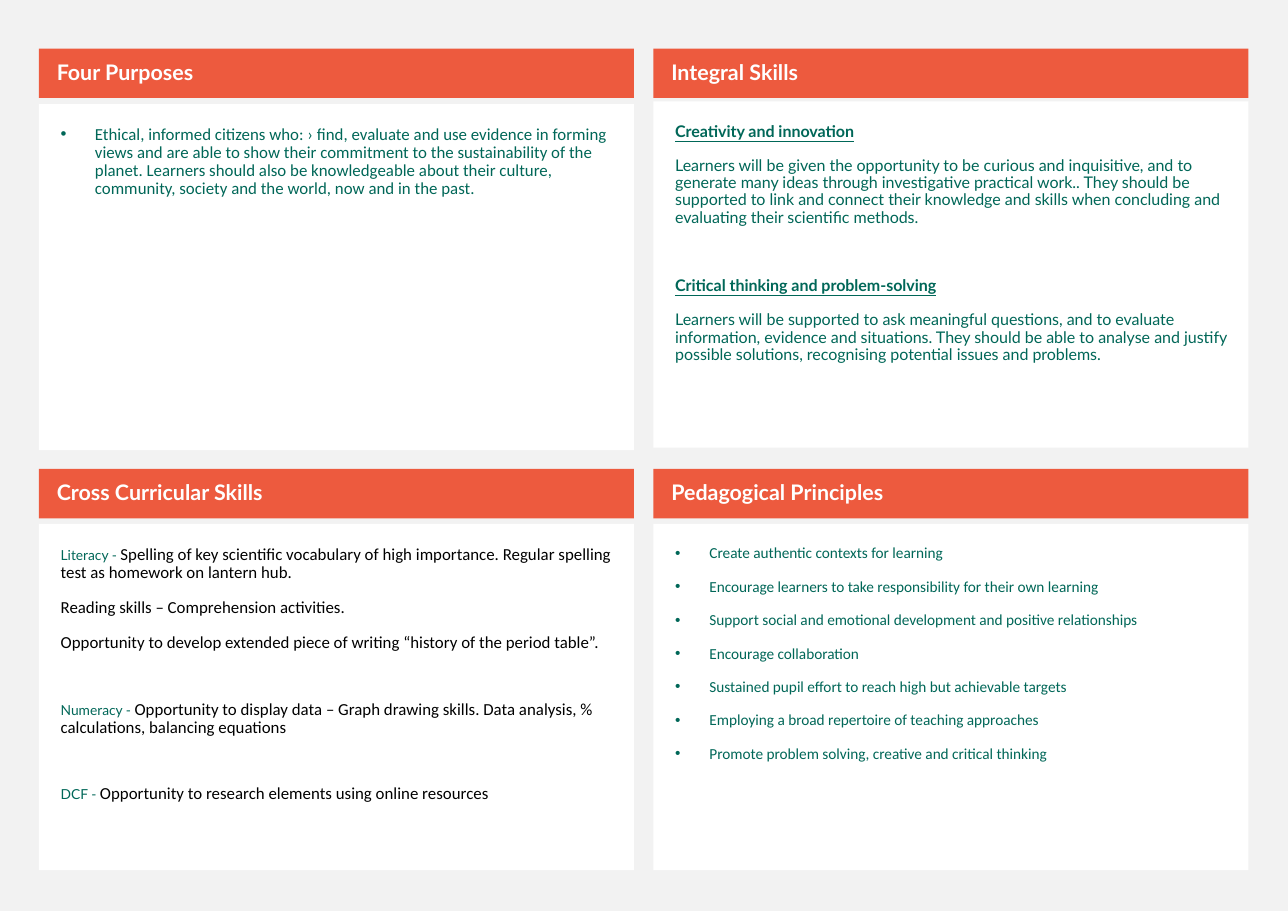
from lxml.etree import SubElement
from pptx import Presentation
from pptx.dml.color import RGBColor
from pptx.enum.shapes import MSO_SHAPE
from pptx.enum.text import MSO_ANCHOR, PP_ALIGN
from pptx.oxml.ns import qn
from pptx.util import Cm, Pt

GREY = RGBColor(0xF2, 0xF2, 0xF2)
WHITE = RGBColor(0xFF, 0xFF, 0xFF)
BLACK = RGBColor(0x00, 0x00, 0x00)
ORANGE = RGBColor(0xED, 0x5A, 0x3E)
GREEN = RGBColor(0x00, 0x67, 0x58)

STYLES = {
    "header": ("Lato", 14, WHITE, True, False),
    "purpose": ("Calibri", 11, GREEN, False, False),
    "skill": ("Lato", 10.5, GREEN, True, True),
    "detail": ("Lato", 10.5, GREEN, False, False),
    "label": ("Lato", 9, GREEN, False, False),
    "note": ("Calibri", 11, BLACK, False, False),
    "principle": ("Calibri", 10, GREEN, False, False),
}
NORMAL_GAP = 11
SKILL_GAP = 33.3
LABEL_GAP = 31.7

PURPOSES = [
    (NORMAL_GAP, [("purpose", "Ethical, informed citizens who: › find, evaluate and use evidence in forming views and are able to show their commitment to the sustainability of the planet. Learners should also be knowledgeable about their culture, community, society and the world, now and in the past.")]),
]
INTEGRAL_SKILLS = [
    (NORMAL_GAP, [("skill", "Creativity and innovation")]),
    (NORMAL_GAP, [("detail", "Learners will be given the opportunity to be curious and inquisitive, and to generate many ideas through investigative practical work.. They should be supported to link and connect their knowledge and skills when concluding and evaluating their scientific methods.")]),
    (SKILL_GAP, [("skill", "Critical thinking and problem-solving")]),
    (NORMAL_GAP, [("detail", "Learners will be supported to ask meaningful questions, and to evaluate information, evidence and situations. They should be able to analyse and justify possible solutions, recognising potential issues and problems.")]),
]
CROSS_SKILLS = [
    (NORMAL_GAP, [("label", "Literacy - "), ("note", "Spelling of key scientific vocabulary of high importance. Regular spelling test as homework on lantern hub.")]),
    (NORMAL_GAP, [("note", "Reading skills – Comprehension activities.")]),
    (NORMAL_GAP, [("note", "Opportunity to develop extended piece of writing “history of the period table”.")]),
    (LABEL_GAP, [("label", "Numeracy - "), ("note", "Opportunity to display data – Graph drawing skills. Data analysis, % calculations, balancing equations")]),
    (LABEL_GAP, [("label", "DCF - "), ("note", "Opportunity to research elements using online resources")]),
]
PRINCIPLES = [
    (NORMAL_GAP, [("principle", text)])
    for text in (
        "Create authentic contexts for learning",
        "Encourage learners to take responsibility for their own learning",
        "Support social and emotional development and positive relationships",
        "Encourage collaboration",
        "Sustained pupil effort to reach high but achievable targets",
        "Employing a broad repertoire of teaching approaches",
        "Promote problem solving, creative and critical thinking",
    )
]

PANELS = [
    (0, 0, Cm(1.28), "Four Purposes", PURPOSES, True, PP_ALIGN.LEFT),
    (1, 0, Cm(1.22), "Integral Skills", INTEGRAL_SKILLS, False, PP_ALIGN.LEFT),
    (0, 1, Cm(1.27), "Cross Curricular Skills", CROSS_SKILLS, False, PP_ALIGN.LEFT),
    (1, 1, Cm(1.27), "Pedagogical Principles", PRINCIPLES, True, PP_ALIGN.JUSTIFY),
]

LEFT, TOP = Cm(0.9), Cm(1.12)
COLUMN_STEP, ROW_STEP = Cm(14.17), Cm(9.69)
PANEL_WIDTH, HEADER_HEIGHT, BODY_HEIGHT = Cm(13.72), Cm(1.14), Cm(7.98)
HEADER_INSETS = (Cm(0.41), Cm(0.13), Cm(0.25), Cm(0.13))
BODY_INSETS = (Cm(0.5), Cm(0.5), Cm(0.45), Cm(0.5))
BULLET_INDENT = Cm(0.79)


def add_box(page, left, top, height, color, insets, anchor):
    box = page.shapes.add_shape(MSO_SHAPE.RECTANGLE, left, top, PANEL_WIDTH, height)
    box.shadow.inherit = False
    box.fill.solid()
    box.fill.fore_color.rgb = color
    box.line.fill.background()
    frame = box.text_frame
    frame.word_wrap = True
    frame.vertical_anchor = anchor
    frame.margin_left, frame.margin_top, frame.margin_right, frame.margin_bottom = insets
    return frame


def add_bullet(para):
    properties = para._p.get_or_add_pPr()
    properties.set("marL", str(BULLET_INDENT))
    properties.set("indent", str(-BULLET_INDENT))
    SubElement(properties, qn("a:buFont"), typeface="Arial")
    SubElement(properties, qn("a:buChar"), char="•")


def write_paragraphs(frame, paragraphs, bulleted, alignment):
    for index, (gap, spans) in enumerate(paragraphs):
        para = frame.add_paragraph() if index else frame.paragraphs[0]
        para.alignment = alignment
        para.line_spacing = 0.9
        para.space_before = Pt(gap)
        if bulleted:
            add_bullet(para)
        for style, text in spans:
            span = para.add_run()
            span.text = text
            font = span.font
            font.name, size, font.color.rgb, font.bold, font.underline = STYLES[style]
            font.size = Pt(size)


def main():
    deck = Presentation()
    deck.slide_width, deck.slide_height = Cm(29.7), Cm(21)
    page = deck.slides.add_slide(deck.slide_layouts[6])
    page.background.fill.solid()
    page.background.fill.fore_color.rgb = GREY

    for column, row, offset, title, paragraphs, bulleted, alignment in PANELS:
        left = LEFT + column * COLUMN_STEP
        top = TOP + row * ROW_STEP
        header = add_box(page, left, top, HEADER_HEIGHT, ORANGE, HEADER_INSETS, MSO_ANCHOR.MIDDLE)
        write_paragraphs(header, [(NORMAL_GAP, [("header", title)])], False, PP_ALIGN.LEFT)
        body = add_box(page, left, top + offset, BODY_HEIGHT, WHITE, BODY_INSETS, MSO_ANCHOR.TOP)
        write_paragraphs(body, paragraphs, bulleted, alignment)

    deck.save("out.pptx")


if __name__ == "__main__":
    main()
